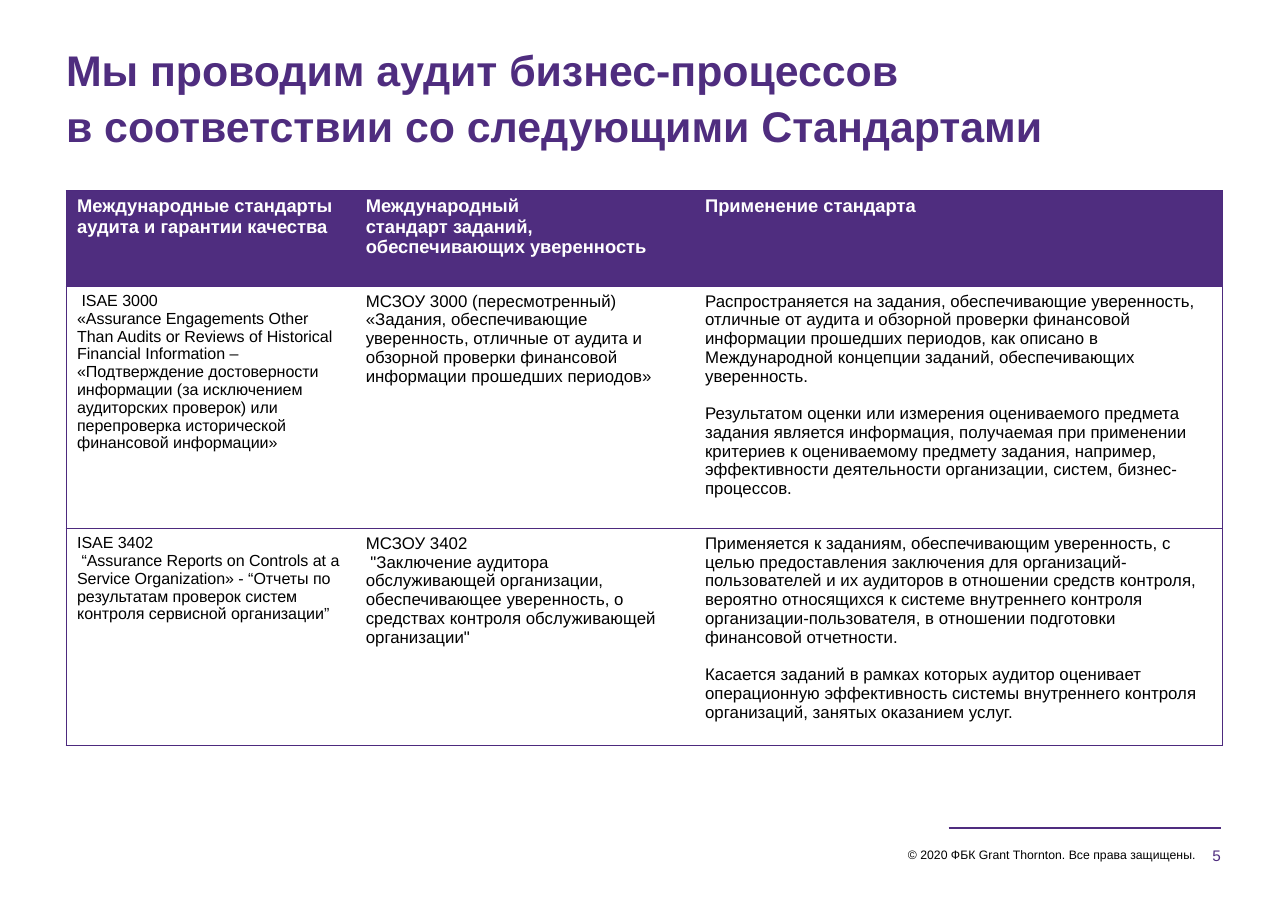
from lxml import etree
from pptx import Presentation
from pptx.dml.color import RGBColor
from pptx.enum import shapes, text
from pptx.oxml import ns
from pptx.util import Inches, Pt

HUES = {"brand": "4F2D7F", "edge": "4D2A7E", "ink": "000000", "paper": "FFFFFF"}
COLS = [2.62, 3.08, 4.8]
TALL = [0.87, 2.2, 1.97]
SIZES = [10.5, 11, 11]
GAP = 12.3  # one line of 11 pt text

# Each cell is a list of paragraphs
ROWS = [
    [
        ["Международные стандарты аудита и гарантии качества"],
        ["Международный ", "стандарт заданий, обеспечивающих уверенность"],
        ["Применение стандарта"],
    ],
    [
        [" ISAE 3000 ",
         "«Assurance Engagements Other Than Audits or Reviews of Historical "
         "Financial Information – «Подтверждение достоверности информации "
         "(за исключением аудиторских проверок) или перепроверка "
         "исторической финансовой информации»"],
        ["МСЗОУ 3000 (пересмотренный) «Задания, обеспечивающие уверенность, "
         "отличные от аудита и обзорной проверки финансовой информации "
         "прошедших периодов»"],
        ["Распространяется на задания, обеспечивающие уверенность, отличные "
         "от аудита и обзорной проверки финансовой информации прошедших "
         "периодов, как описано в Международной концепции заданий, "
         "обеспечивающих уверенность.",
         "Результатом оценки или измерения оцениваемого предмета задания "
         "является информация, получаемая при применении критериев к "
         "оцениваемому предмету задания, например, эффективности "
         "деятельности организации, систем, бизнес-процессов."],
    ],
    [
        ["ISAE 3402",
         " “Assurance Reports on Controls at a Service Organization» - "
         "“Отчеты по результатам проверок систем контроля сервисной "
         "организации”"],
        ["МСЗОУ 3402",
         " \"Заключение аудитора обслуживающей организации, обеспечивающее "
         "уверенность, о средствах контроля обслуживающей организации\""],
        ["Применяется к заданиям, обеспечивающим уверенность, с целью "
         "предоставления заключения для организаций-пользователей и их "
         "аудиторов в отношении средств контроля, вероятно относящихся к "
         "системе внутреннего контроля организации-пользователя, в отношении "
         "подготовки финансовой отчетности.",
         "Касается заданий в рамках которых аудитор оценивает операционную "
         "эффективность системы внутреннего контроля организаций, занятых "
         "оказанием услуг."],
    ],
]


def rgb(hue):
    return RGBColor.from_string(HUES[hue])


def write(frame, paras, size=11, hue="ink", bold=False, align="LEFT",
          lead=None, gap=0):
    for i, line in enumerate(paras):
        para = frame.add_paragraph() if i else frame.paragraphs[0]
        para.text = line
        para.alignment = getattr(text.PP_ALIGN, align)
        para.space_before = Pt(gap if i else 0)
        if lead:
            para.line_spacing = Pt(lead)
        for run in para.runs:
            font = run.font
            font.name, font.size, font.bold = "Arial", Pt(size), bold
            font.color.rgb = rgb(hue)


def pad(frame, side=0, ends=0):
    frame.margin_left = frame.margin_right = Inches(side)
    frame.margin_top = frame.margin_bottom = Inches(ends)
    frame.word_wrap = True


def label(slide, box, line, ends=0, **form):
    frame = slide.shapes.add_textbox(*map(Inches, box)).text_frame
    pad(frame, ends=ends)
    write(frame, [line], **form)


def border(cell, sides):
    """Draw the named sides and clear the others."""
    props = cell._tc.get_or_add_tcPr()
    for side in "LRTB":
        edge = etree.SubElement(props, ns.qn(f"a:ln{side}"), w=str(Pt(0.75)))
        if side in sides:
            fill = etree.SubElement(edge, ns.qn("a:solidFill"))
            etree.SubElement(fill, ns.qn("a:srgbClr"), val=HUES["edge"])
        else:
            etree.SubElement(edge, ns.qn("a:noFill"))


def heading(slide):
    title = slide.shapes.title
    title.left, title.top = Inches(0.6), Inches(0.36)
    title.width, title.height = Inches(10.5), Inches(1.03)
    frame = title.text_frame
    pad(frame)
    frame.auto_size = text.MSO_AUTO_SIZE.NONE
    frame.vertical_anchor = text.MSO_ANCHOR.TOP
    write(frame, ["Мы проводим аудит бизнес-процессов \n"
                  "в соответствии со следующими Стандартами"],
          size=28, hue="brand", bold=True, lead=36.5)


def grid(slide):
    table = slide.shapes.add_table(
        len(ROWS), len(COLS), Inches(0.6), Inches(1.73),
        Inches(sum(COLS)), Inches(sum(TALL))).table
    table.horz_banding = False
    for col, wide in zip(table.columns, COLS):
        col.width = Inches(wide)
    for r, row in enumerate(ROWS):
        table.rows[r].height = Inches(TALL[r])
        for c, paras in enumerate(row):
            cell = table.cell(r, c)
            border(cell, "TB" + ("L", "", "R")[c])
            cell.fill.solid()
            cell.fill.fore_color.rgb = rgb("paper" if r else "brand")
            if r:
                write(cell.text_frame, paras, size=SIZES[c],
                      gap=GAP if c == 2 else 0)
            else:
                write(cell.text_frame, paras, size=12, hue="paper", bold=True)


def footer(slide):
    rule = slide.shapes.add_connector(
        shapes.MSO_CONNECTOR.STRAIGHT,
        Inches(8.61), Inches(7.52), Inches(11.08), Inches(7.52))
    rule.line.color.rgb = rgb("brand")
    rule.line.width = Pt(1.5)
    etree.SubElement(rule._element.spPr, ns.qn("a:effectLst"))
    label(slide, (8.24, 7.63, 3.36, 0.26),
          "© 2020 ФБК Grant Thornton. Все права защищены.", ends=0.06, size=8)
    label(slide, (10.86, 7.68, 0.22, 0.17), "5",
          size=10, hue="brand", align="RIGHT")


def main():
    deck = Presentation()
    deck.slide_width, deck.slide_height = Inches(11.69), Inches(8.27)
    slide = deck.slides.add_slide(deck.slide_layouts[5])
    heading(slide)
    grid(slide)
    footer(slide)
    deck.save("out.pptx")


if __name__ == "__main__":
    main()
